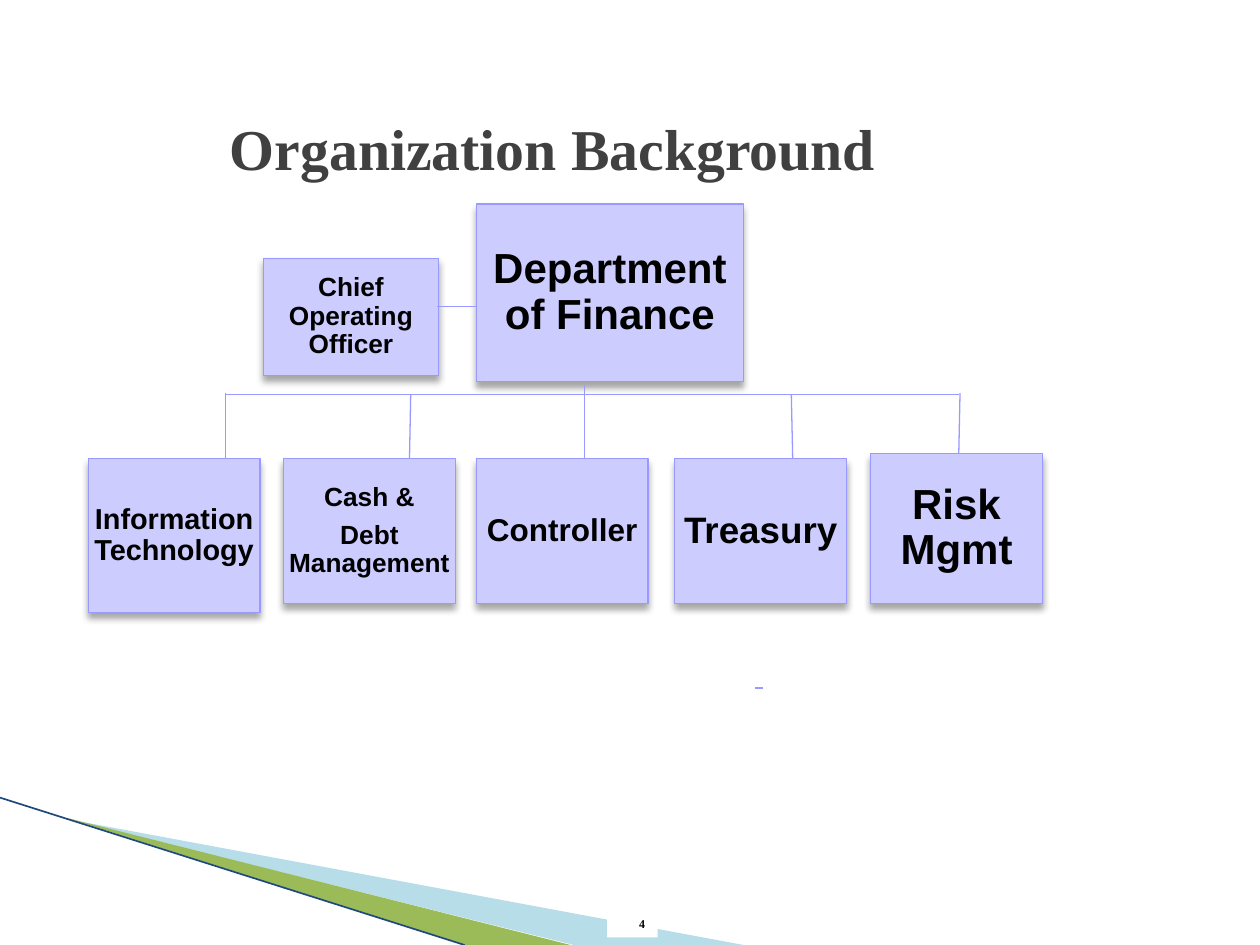
from lxml import etree
from pptx import Presentation
from pptx.dml.color import RGBColor
from pptx.enum import shapes, text
from pptx.oxml import ns
from pptx.util import Pt

COLORS = {
    "box": "CCCCFF", "line": "9999FF", "text": "000000", "title": "404040",
    "white": "FFFFFF", "pale_blue": "B7DDE8", "green": "9BBB59", "navy": "1F497D",
}

DEPARTMENT = ("Department of Finance", 272.2, 116.6, 152.6, 101.5, 24)
OFFICER = ("Chief Operating Officer", 150.5, 147.6, 100.1, 67, 15)
# text, left, top, height, font size
DIVISIONS = [
    ("Information Technology", 50.4, 262.1, 88, 16.5),
    ("Cash &\nDebt Management", 162, 262.1, 82.8, 15),
    ("Controller", 272.2, 262.1, 82.8, 18),
    ("Treasury", 385.6, 262.1, 82.8, 21),
    ("Risk Mgmt", 497.5, 259.2, 85.7, 24),
]
DIVISION_WIDTH = 98.2
BUS_Y = 225.5
# start and end of each line: x1, y1, x2, y2
CONNECTORS = [
    (128.9, BUS_Y, 547.9, BUS_Y),
    (249.8, 175.1, 272.2, 175.1),
    (128.9, 224.6, 128.9, 262.1),
    (234.7, BUS_Y, 234, 262.1),
    (334.1, 220.3, 334.1, 262.1),
    (452.2, BUS_Y, 453, 262.1),
    (548.6, 224.6, 547.9, 258.8),
    (431.3, 393.1, 436.3, 393.1),
]


def rgb(name):
    return RGBColor.from_string(COLORS[name])


def write_text(shape, content, size, font="Arial", color="text", align="CENTER",
               anchor="MIDDLE", margin=None, line_spacing=None, space_after=0):
    """Fill a shape with bold text, one paragraph per line of content."""
    frame = shape.text_frame
    frame.word_wrap = True
    frame.auto_size = text.MSO_AUTO_SIZE.NONE
    frame.vertical_anchor = getattr(text.MSO_ANCHOR, anchor)
    if margin is not None:
        frame.margin_left = frame.margin_right = Pt(margin)
        frame.margin_top = frame.margin_bottom = Pt(margin)
    frame.text = content
    for paragraph in frame.paragraphs:
        paragraph.alignment = getattr(text.PP_ALIGN, align)
        paragraph.line_spacing = line_spacing
        paragraph.space_before = Pt(0)
        paragraph.space_after = Pt(space_after)
        for run in paragraph.runs:
            run.font.name = font
            run.font.size = Pt(size)
            run.font.bold = True
            run.font.color.rgb = rgb(color)


def paint(shape, fill, line=None):
    shape.shadow.inherit = False
    shape.fill.solid()
    shape.fill.fore_color.rgb = rgb(fill)
    if line:
        shape.line.color.rgb = rgb(line)
        shape.line.width = Pt(0.75)
    else:
        shape.line.fill.background()


def add_rectangle(slide, left, top, width, height, fill, line=None):
    shape = slide.shapes.add_shape(
        shapes.MSO_SHAPE.RECTANGLE, Pt(left), Pt(top), Pt(width), Pt(height))
    paint(shape, fill, line)
    return shape


def add_soft_shadow(shape):
    effects = shape._element.spPr.find(ns.qn("a:effectLst"))
    shadow = etree.SubElement(
        effects, ns.qn("a:outerShdw"), blurRad=str(Pt(4)), dist=str(Pt(3)),
        dir="5400000", rotWithShape="0")
    color = etree.SubElement(shadow, ns.qn("a:srgbClr"), val="000000")
    etree.SubElement(color, ns.qn("a:alpha"), val="35000")


def add_org_box(slide, content, left, top, width, height, size):
    box = add_rectangle(slide, left, top, width, height, "box", "line")
    add_soft_shadow(box)
    write_text(box, content, size, margin=0, line_spacing=0.9,
               space_after=round(size * 0.35, 2))


def add_line(slide, x1, y1, x2, y2, color="line", width=0.75):
    line = slide.shapes.add_connector(
        shapes.MSO_CONNECTOR.STRAIGHT, Pt(x1), Pt(y1), Pt(x2), Pt(y2))
    line.line.color.rgb = rgb(color)
    line.line.width = Pt(width)
    etree.SubElement(line._element.spPr, ns.qn("a:effectLst"))


def add_wedge(slide, points, fill):
    start, *others = [(Pt(x), Pt(y)) for x, y in points]
    builder = slide.shapes.build_freeform(*start)
    builder.add_line_segments(others, close=True)
    paint(builder.convert_to_shape(), fill)


def add_corner_decoration(slide):
    add_wedge(slide, [(39.6, 468.3), (425, 540), (328, 540)], "pale_blue")
    add_wedge(slide, [(38.5, 467.5), (326, 540), (266, 540)], "green")
    add_line(slide, 0, 455.8, 265.5, 540, "navy", 0.95)


def add_title(slide):
    title = slide.shapes.title
    title.left, title.top = Pt(20.2), Pt(60.5)
    title.width, title.height = Pt(591.1), Pt(47.5)
    write_text(title, "Organization Background", 33,
               font="Times New Roman", color="title")


def add_page_number(slide):
    badge = add_rectangle(slide, 347, 506.9, 28.8, 28.8, "white")
    write_text(badge, "4", 6.8, font="Times New Roman", align="RIGHT", anchor="BOTTOM")


def main():
    presentation = Presentation()
    presentation.slide_width, presentation.slide_height = Pt(720), Pt(540)
    slide = presentation.slides.add_slide(presentation.slide_layouts[5])
    add_corner_decoration(slide)
    add_page_number(slide)
    add_org_box(slide, *DEPARTMENT)
    for content, left, top, height, size in DIVISIONS:
        add_org_box(slide, content, left, top, DIVISION_WIDTH, height, size)
    add_org_box(slide, *OFFICER)
    for ends in CONNECTORS:
        add_line(slide, *ends)
    add_title(slide)
    presentation.save("out.pptx")


if __name__ == "__main__":
    main()
